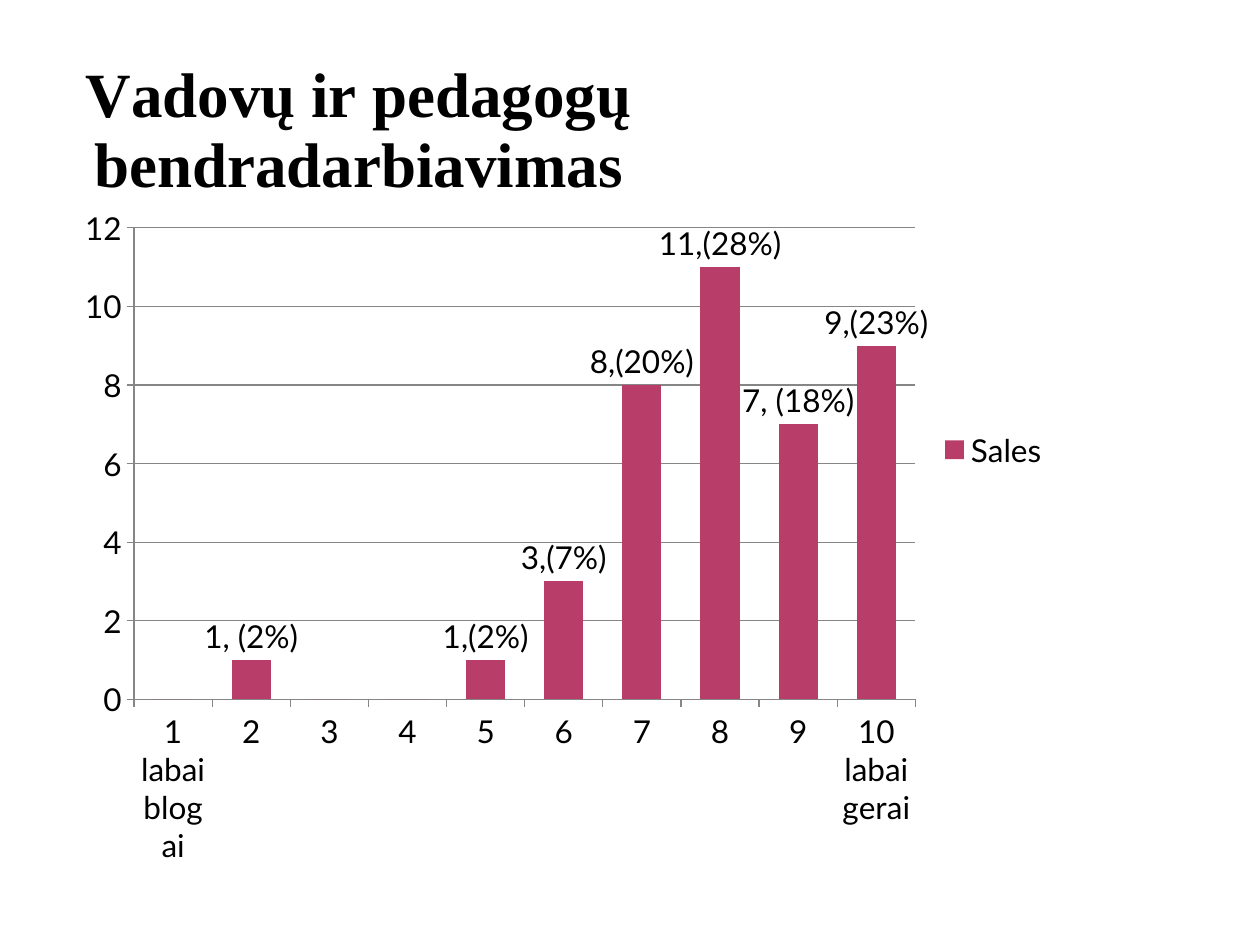
from dataclasses import dataclass

from lxml import etree
from pptx import Presentation
from pptx.chart.chart import Chart
from pptx.chart.data import CategoryChartData
from pptx.dml.color import RGBColor
from pptx.enum.chart import (XL_CHART_TYPE, XL_LABEL_POSITION,
                             XL_LEGEND_POSITION, XL_TICK_MARK)
from pptx.oxml.ns import qn
from pptx.util import Inches, Pt

COLUMNS = XL_CHART_TYPE.COLUMN_CLUSTERED
ABOVE = XL_LABEL_POSITION.OUTSIDE_END
RIGHT = XL_LEGEND_POSITION.RIGHT
OUTSIDE = XL_TICK_MARK.OUTSIDE
BLANK = 6


@dataclass(frozen=True)
class Theme:
    text: RGBColor = RGBColor(0x00, 0x00, 0x00)
    bar: RGBColor = RGBColor(0xB8, 0x3D, 0x68)
    line: RGBColor = RGBColor(0x86, 0x86, 0x86)
    title_font: str = "Times New Roman"
    body_font: str = "Lato"
    title_size: Pt = Pt(36)
    body_size: Pt = Pt(18)
    line_width: Pt = Pt(0.75)


@dataclass(frozen=True)
class Rating:
    category: str
    votes: int
    label: str = ""


THEME = Theme()
RATINGS = [
    Rating("1 labai blogai", 0),
    Rating("2", 1, "1, (2%)"),
    Rating("3", 0),
    Rating("4", 0),
    Rating("5", 1, "1,(2%)"),
    Rating("6", 3, "3,(7%)"),
    Rating("7", 8, "8,(20%)"),
    Rating("8", 11, "11,(28%)"),
    Rating("9", 7, "7, (18%)"),
    Rating("10 labai gerai", 9, "9,(23%)"),
]


def set_font(font, name: str, size: Pt, bold: bool = False) -> None:
    font.name, font.size, font.bold = name, size, bold
    font.color.rgb = THEME.text


def set_layout(parent, index: int, **values) -> None:
    """Place a chart part by fractions of the chart's size."""
    for old in parent.findall(qn("c:layout")):
        parent.remove(old)
    layout = etree.Element(qn("c:layout"))
    manual = etree.SubElement(layout, qn("c:manualLayout"))
    for tag, value in values.items():
        etree.SubElement(manual, qn(f"c:{tag}")).set("val", str(value))
    parent.insert(index, layout)


def style_title(chart: Chart, text: str) -> None:
    chart.has_title = True
    p = chart.chart_title.text_frame.paragraphs[0]
    r = p.add_run()
    r.text = text
    set_font(r.font, THEME.title_font, THEME.title_size, bold=True)
    title = chart.element.find(".//" + qn("c:title"))
    set_layout(title, 1, xMode="edge", yMode="edge", x=0.01, y=0.03)
    chart.chart_title.include_in_layout = False


def style_axes(chart: Chart) -> None:
    for axis in (chart.category_axis, chart.value_axis):
        axis.major_tick_mark = OUTSIDE
        axis.format.line.color.rgb = THEME.line
        axis.format.line.width = THEME.line_width
    axis = chart.value_axis
    axis.minimum_scale, axis.maximum_scale, axis.major_unit = 0, 12, 2
    axis.has_major_gridlines = True
    axis.major_gridlines.format.line.color.rgb = THEME.line
    axis.major_gridlines.format.line.width = THEME.line_width


def style_bars(chart: Chart, ratings: list[Rating]) -> None:
    plot = chart.plots[0]
    plot.gap_width = 100
    plot.vary_by_categories = False
    series = plot.series[0]
    series.format.fill.solid()
    series.format.fill.fore_color.rgb = THEME.bar
    for i, rating in enumerate(ratings):
        if rating.label:
            label = series.points[i].data_label
            r = label.text_frame.paragraphs[0].add_run()
            r.text = rating.label
            set_font(r.font, THEME.body_font, THEME.body_size)
            label.position = ABOVE


def main() -> None:
    prs = Presentation()
    prs.slide_width, prs.slide_height = Inches(10), Inches(7.5)
    s = prs.slides.add_slide(prs.slide_layouts[BLANK])

    # Chart with one series of ratings
    data = CategoryChartData()
    data.categories = [rating.category for rating in RATINGS]
    data.add_series("Sales", [rating.votes for rating in RATINGS])
    chart = s.shapes.add_chart(COLUMNS, Inches(0.51), Inches(0.13),
                               Inches(7.92), Inches(6.88), data).chart
    set_font(chart.font, THEME.body_font, THEME.body_size)

    # Title, axes and bars
    style_title(chart, "Vadovų ir pedagogų bendradarbiavimas")
    style_axes(chart)
    style_bars(chart, RATINGS)

    # Plot area and legend
    plot_area = chart.element.find(".//" + qn("c:plotArea"))
    set_layout(plot_area, 0, layoutTarget="inner", xMode="edge",
               yMode="edge", x=0.07, y=0.244, w=0.783, h=0.544)
    chart.has_legend = True
    chart.legend.position = RIGHT
    chart.legend.include_in_layout = False

    prs.save("out.pptx")


if __name__ == "__main__":
    main()
